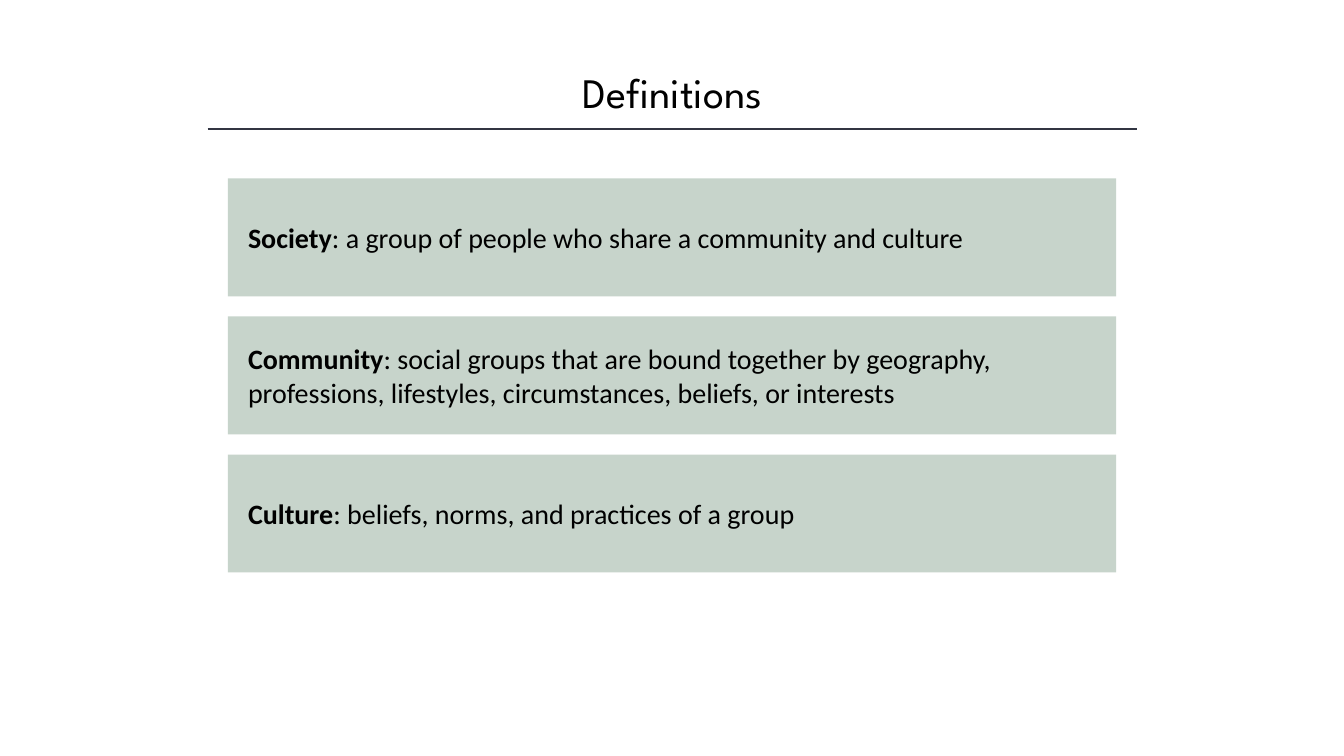
"""Build a slide that defines society, community and culture."""
from dataclasses import dataclass

from lxml.etree import SubElement
from pptx import Presentation
from pptx.dml.color import RGBColor as RGB
from pptx.enum.shapes import MSO_CONNECTOR as Link, MSO_SHAPE as Shape
from pptx.enum.text import MSO_ANCHOR as Anchor, PP_ALIGN as Align
from pptx.oxml.ns import qn
from pptx.util import Inches, Pt


@dataclass(frozen=True)
class Theme:
    ink: RGB = RGB(0x00, 0x00, 0x00)
    rule: RGB = RGB(0x32, 0x35, 0x42)
    card: RGB = RGB(0xC7, 0xD4, 0xCB)
    head: str = "League Spartan"
    body: str = "Calibri"
    large: Pt = Pt(30)
    small: Pt = Pt(20)


theme = Theme()


def add_run(para, text, face, size, bold=False):
    """Add one styled run to a paragraph."""
    run = para.add_run()
    run.text = text
    run.font.name = face
    run.font.size = size
    run.font.bold = bold
    run.font.color.rgb = theme.ink


deck = Presentation()
deck.slide_width = Inches(13.33)
deck.slide_height = Inches(7.5)
slide = deck.slides.add_slide(deck.slide_layouts[6])

title = slide.shapes.add_textbox(Inches(1.67), Inches(0.61), Inches(10), Inches(0.61))
title.text_frame.word_wrap = True
para = title.text_frame.paragraphs[0]
para.alignment = Align.CENTER
add_run(para, "Definitions", theme.head, theme.large)

rule = slide.shapes.add_connector(
    Link.STRAIGHT, Inches(2.06), Inches(1.28), Inches(11.28), Inches(1.28)
)
rule.line.color.rgb = theme.rule
rule.line.width = Pt(1)
SubElement(rule.element.spPr, qn("a:effectLst"))

terms = [
    ("Society", ": a group of people who share a community and culture"),
    ("Community", ": social groups that are bound together by geography, "
     "professions, lifestyles, circumstances, beliefs, or interests"),
    ("Culture", ": beliefs, norms, and practices of a group"),
]
left, top, width, height = 2.26, 1.77, 8.81, 1.17
gap = 0.2

for row, (term, sense) in enumerate(terms):
    card = slide.shapes.add_shape(
        Shape.RECTANGLE, Inches(left), Inches(top + row * (height + gap)),
        Inches(width), Inches(height),
    )
    card.shadow.inherit = False
    card.fill.solid()
    card.fill.fore_color.rgb = theme.card
    card.line.fill.background()
    frame = card.text_frame
    frame.word_wrap = True
    frame.vertical_anchor = Anchor.MIDDLE
    frame.margin_left = frame.margin_right = Inches(0.2)
    para = frame.paragraphs[0]
    para.alignment = Align.LEFT
    add_run(para, term, theme.body, theme.small, True)
    add_run(para, sense, theme.body, theme.small)

deck.save("out.pptx")
